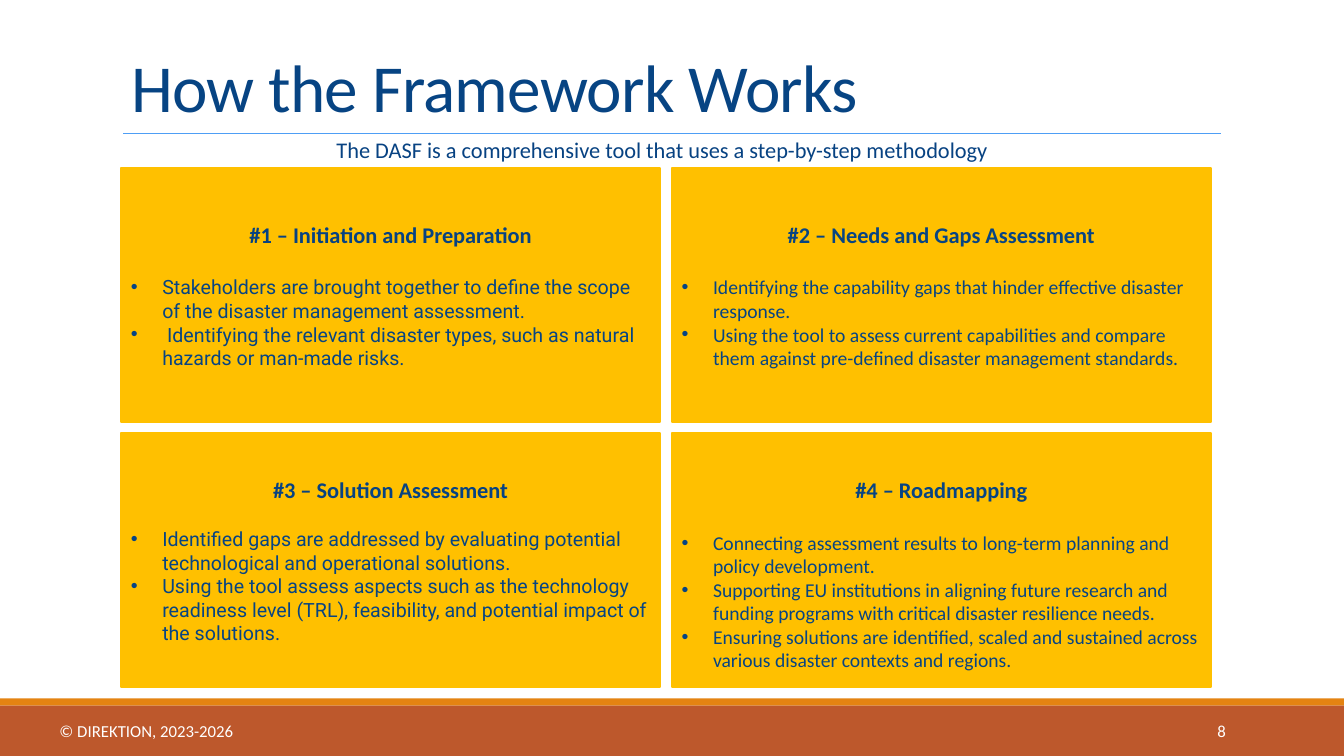
from pptx import Presentation
from pptx.dml.color import RGBColor
from pptx.enum.shapes import MSO_CONNECTOR, MSO_SHAPE
from pptx.enum.text import MSO_ANCHOR, MSO_AUTO_SIZE, PP_ALIGN
from pptx.oxml.ns import qn
from pptx.util import Cm, Pt
from lxml.etree import SubElement

COLOURS = {
    "navy": "074483",
    "ink": "074282",
    "rule": "4E9EF5",
    "card": "FFC000",
    "stripe": "E48312",
    "footer": "BD582C",
    "white": "FFFFFF",
}
PAGE_WIDTH, PAGE_HEIGHT = 33.87, 19.05
CARD_LEFT, CARD_TOP = 3.05, 4.24
CARD_WIDTH, CARD_HEIGHT = 13.59, 6.4
COLUMN_STEP, ROW_STEP = 13.88, 6.68
CARDS = [
    ("#1 – Initiation and Preparation", "ink", "Roboto", 19.5, 0.13, [
        "Stakeholders are brought together to define the scope of the disaster management assessment.",
        " Identifying the relevant disaster types, such as natural hazards or man-made risks.",
    ]),
    ("#2 – Needs and Gaps Assessment", "navy", "Calibri", 19.5, 0.13, [
        "Identifying the capability gaps that hinder effective disaster response.",
        "Using the tool to assess current capabilities and compare them against "
        "pre-defined disaster management standards.",
    ]),
    ("#3 – Solution Assessment", "ink", "Roboto", 17, 0.13, [
        "Identified gaps are addressed by evaluating potential technological and operational solutions.",
        "Using the tool assess aspects such as the technology readiness level (TRL), "
        "feasibility, and potential impact of the solutions.",
    ]),
    ("#4 – Roadmapping", "navy", "Calibri", 19.5, 0.82, [
        "Connecting assessment results to long-term planning and policy development.",
        "Supporting EU institutions in aligning future research and funding programs "
        "with critical disaster resilience needs.",
        "Ensuring solutions are identified, scaled and sustained across various "
        "disaster contexts and regions.",
    ]),
]


class SlideBuilder:
    """Hold the style and the current slide, and add its elements."""

    def __init__(self, page):
        self.page = page

    def colour(self, name):
        return RGBColor.from_string(COLOURS[name])

    def style(self, paragraph, size, colour, name="Calibri", bold=False):
        font = paragraph.font
        font.name, font.size, font.bold = name, Pt(size), bold
        font.color.rgb = self.colour(colour)

    def title(self, text):
        title = self.page.shapes.title
        title.left, title.top, title.width, title.height = Cm(3.05), Cm(0.79), Cm(27.94), Cm(2.51)
        frame = title.text_frame
        frame.text = text
        frame.auto_size = MSO_AUTO_SIZE.NONE
        frame.vertical_anchor = MSO_ANCHOR.BOTTOM
        paragraph = frame.paragraphs[0]
        paragraph.alignment = PP_ALIGN.LEFT
        paragraph.line_spacing = 0.85
        self.style(paragraph, 48, "navy")
        paragraph.runs[0].font._element.set("spc", "-50")

    def rectangle(self, left, top, width, height, fill, outlined=False):
        box = self.page.shapes.add_shape(
            MSO_SHAPE.RECTANGLE, Cm(left), Cm(top), Cm(width), Cm(height))
        box.shadow.inherit = False
        box.fill.solid()
        box.fill.fore_color.rgb = self.colour(fill)
        if outlined:
            box.line.color.rgb = self.colour(fill)
            box.line.width = Pt(1.25)
        else:
            box.line.fill.background()
        frame = box.text_frame
        frame.word_wrap = True
        frame.vertical_anchor = MSO_ANCHOR.MIDDLE
        return frame

    def rule(self, left, right, top):
        line = self.page.shapes.add_connector(
            MSO_CONNECTOR.STRAIGHT, Cm(left), Cm(top), Cm(right), Cm(top))
        line.line.color.rgb = self.colour("rule")
        line.line.width = Pt(0.5)
        SubElement(line._element.spPr, qn("a:effectLst"))

    def subtitle(self, text):
        box = self.page.shapes.add_textbox(Cm(2.87), Cm(3.3), Cm(27.64), Cm(0.94))
        frame = box.text_frame
        frame.word_wrap = True
        frame.text = text
        paragraph = frame.paragraphs[0]
        paragraph.alignment = PP_ALIGN.CENTER
        self.style(paragraph, 16, "ink")

    def bullet(self, paragraph):
        properties = paragraph._p.get_or_add_pPr()
        properties.set("marL", str(Cm(0.79)))
        properties.set("indent", str(-Cm(0.79)))
        SubElement(properties, qn("a:buFont"), typeface="Arial")
        SubElement(properties, qn("a:buChar"), char="•")

    def card(self, left, top, heading, heading_colour, font_name, gap, inset, items):
        frame = self.rectangle(left, top, CARD_WIDTH, CARD_HEIGHT, "card", outlined=True)
        frame.margin_top = Cm(inset)
        paragraph = frame.paragraphs[0]
        paragraph.text = heading
        paragraph.alignment = PP_ALIGN.CENTER
        paragraph.space_after = Pt(gap)
        self.style(paragraph, 16, heading_colour, bold=True)
        for item in items:
            paragraph = frame.add_paragraph()
            paragraph.text = item
            paragraph.alignment = PP_ALIGN.LEFT
            self.bullet(paragraph)
            self.style(paragraph, 14, "navy", font_name)

    def footer(self, text):
        self.rectangle(0, 17.6, PAGE_WIDTH, 0.18, "stripe")
        frame = self.rectangle(0, 17.78, PAGE_WIDTH, 1.27, "footer")
        frame.margin_left = Cm(1.5)
        paragraph = frame.paragraphs[0]
        paragraph.text = text
        paragraph.alignment = PP_ALIGN.LEFT
        tabs = SubElement(paragraph._p.get_or_add_pPr(), qn("a:tabLst"))
        SubElement(tabs, qn("a:tab"), pos=str(Cm(29.18)), algn="l")
        self.style(paragraph, 12, "white")


def main():
    deck = Presentation()
    deck.slide_width, deck.slide_height = Cm(PAGE_WIDTH), Cm(PAGE_HEIGHT)
    builder = SlideBuilder(deck.slides.add_slide(deck.slide_layouts[5]))
    builder.footer("© DIREKTION, 2023-2026\t8")
    builder.rule(3.1, 30.78, 3.37)
    builder.title("How the Framework Works")
    builder.subtitle("The DASF is a comprehensive tool that uses a step-by-step methodology")
    for index, card in enumerate(CARDS):
        row, column = divmod(index, 2)
        builder.card(CARD_LEFT + column * COLUMN_STEP, CARD_TOP + row * ROW_STEP, *card)
    deck.save("out.pptx")


if __name__ == "__main__":
    main()
